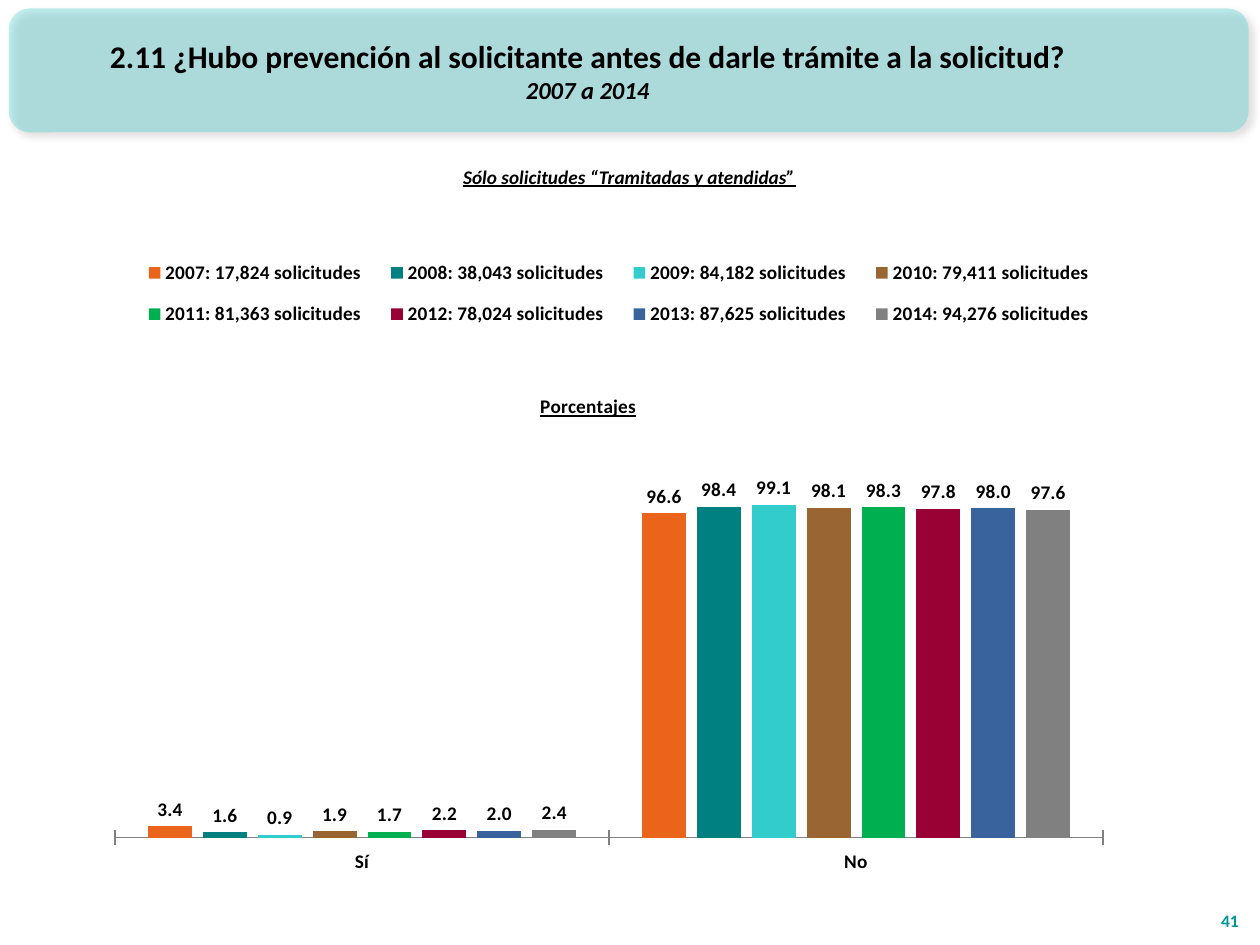
from dataclasses import dataclass
from typing import Any

from lxml.etree import SubElement
from pptx import Presentation
from pptx.chart.data import CategoryChartData
from pptx.dml.color import RGBColor
from pptx.enum.chart import XL_CHART_TYPE, XL_LABEL_POSITION, XL_LEGEND_POSITION, XL_TICK_MARK
from pptx.enum.shapes import MSO_SHAPE
from pptx.enum.text import MSO_ANCHOR, PP_ALIGN
from pptx.oxml import parse_xml
from pptx.oxml.ns import nsdecls, qn
from pptx.util import Inches, Pt

WIDE, HIGH = 10, 7.5


@dataclass(frozen=True)
class Theme:
    font: str = "Calibri"
    ink: str = "000000"
    band: str = "33CCCC"
    page: str = "009999"
    axis: str = "808080"
    head: int = 18
    sub: int = 14
    body: int = 11
    small: int = 10


@dataclass(frozen=True)
class Box:
    """Left, top, width and height as shares of the slide."""
    x: float
    y: float
    w: float
    h: float

    def place(self) -> tuple:
        return (Inches(self.x * WIDE), Inches(self.y * HIGH),
                Inches(self.w * WIDE), Inches(self.h * HIGH))


@dataclass(frozen=True)
class Line:
    text: str
    size: int
    color: str
    slant: bool = False
    under: bool = False


@dataclass(frozen=True)
class Year:
    year: int
    count: str
    yes: float
    color: str


THEME = Theme()
YEARS = [
    Year(2007, "17,824", 3.4, "EB641B"),
    Year(2008, "38,043", 1.6, "008080"),
    Year(2009, "84,182", 0.9, "33CCCC"),
    Year(2010, "79,411", 1.9, "996633"),
    Year(2011, "81,363", 1.7, "00B050"),
    Year(2012, "78,024", 2.2, "990033"),
    Year(2013, "87,625", 2.0, "39639D"),
    Year(2014, "94,276", 2.4, "808080"),
]


def apply(target: Any, **values: Any) -> None:
    for name, value in values.items():
        setattr(target, name, value)


def style(font: Any, size: int, color: str, **more: Any) -> None:
    apply(font, name=THEME.font, size=Pt(size), bold=True, **more)
    font.color.rgb = RGBColor.from_string(color)


def paint(part: Any, color: str) -> None:
    part.fill.solid()
    part.fill.fore_color.rgb = RGBColor.from_string(color)


def write(slide: Any, box: Box, lines: list[Line], align: Any, anchor: Any) -> None:
    frame = slide.shapes.add_textbox(*box.place()).text_frame
    apply(frame, word_wrap=True, vertical_anchor=anchor)
    for i, line in enumerate(lines):
        para = frame.add_paragraph() if i else frame.paragraphs[0]
        para.alignment = align
        run = para.add_run()
        run.text = line.text
        style(run.font, line.size, line.color, italic=line.slant, underline=line.under)


def draw_band(slide: Any, box: Box) -> None:
    """Header band: see-through fill with a soft shadow."""
    band = slide.shapes.add_shape(MSO_SHAPE.ROUNDED_RECTANGLE, *box.place())
    band.shadow.inherit = False
    paint(band, THEME.band)
    band.line.fill.background()
    props = band.element.spPr
    SubElement(props.find(".//" + qn("a:srgbClr")), qn("a:alpha"), val="30000")
    props.find(qn("a:effectLst")).append(parse_xml(
        f'<a:outerShdw {nsdecls("a")} blurRad="{Pt(4)}" dist="{Pt(3)}" dir="2700000" '
        'algn="tl" rotWithShape="0"><a:srgbClr val="000000"><a:alpha val="40000"/>'
        '</a:srgbClr></a:outerShdw>'))


def layout(inner: bool = False, **shares: float) -> Any:
    """Manual layout of a chart part, in shares of the chart."""
    target = '<c:layoutTarget val="inner"/>' if inner else ""
    modes = "".join(f'<c:{k}Mode val="edge"/>' for k in "xy")
    sizes = "".join(f'<c:{k} val="{v}"/>' for k, v in shares.items())
    return parse_xml(f'<c:layout {nsdecls("c")}><c:manualLayout>{target}{modes}{sizes}'
                     '</c:manualLayout></c:layout>')


def set_layout(part: Any, after: str | None, new: Any) -> None:
    for old in part.findall(qn("c:layout")):
        part.remove(old)
    if after:
        part.find(qn(after)).addnext(new)
    else:
        part.insert(0, new)


def draw_chart(slide: Any, box: Box) -> None:
    data = CategoryChartData(number_format="0.0")
    data.categories = ["Sí", "No"]
    for row in YEARS:
        data.add_series(f"{row.year}: {row.count} solicitudes",
                        (row.yes, round(100 - row.yes, 1)))
    chart = slide.shapes.add_chart(
        XL_CHART_TYPE.COLUMN_CLUSTERED, *box.place(), data).chart
    style(chart.font, THEME.body, THEME.ink)

    title = chart.chart_title.text_frame
    title.text = "Porcentajes"
    style(title.paragraphs[0].runs[0].font, THEME.body, THEME.ink, underline=True)
    chart.chart_title.include_in_layout = False

    chart.has_legend = True
    apply(chart.legend, position=XL_LEGEND_POSITION.TOP, include_in_layout=False)

    plot = chart.plots[0]
    apply(plot, gap_width=150, overlap=-25, vary_by_categories=False)
    for bars, row in zip(plot.series, YEARS):
        paint(bars.format, row.color)
        bars.invert_if_negative = False
        labels = bars.data_labels
        apply(labels, show_value=True, number_format="0.0",
              number_format_is_linked=False, position=XL_LABEL_POSITION.OUTSIDE_END)
        style(labels.font, THEME.body, THEME.ink)

    apply(chart.value_axis, visible=False, has_major_gridlines=False,
          minimum_scale=0, maximum_scale=120)
    base = chart.category_axis
    apply(base, major_tick_mark=XL_TICK_MARK.CROSS, has_major_gridlines=False)
    base.format.line.color.rgb = RGBColor.from_string(THEME.axis)

    root = chart.element.chart
    set_layout(root.find(qn("c:title")), "c:tx", layout(x=0.43, y=0.25))
    set_layout(root.find(qn("c:legend")), "c:legendPos",
               layout(x=0.03, y=0.03, w=0.96, h=0.15))
    set_layout(root.plotArea, None, layout(True, x=0.02, y=0.318, w=0.961, h=0.609))


def main() -> None:
    deck = Presentation()
    apply(deck, slide_width=Inches(WIDE), slide_height=Inches(HIGH))
    slide = deck.slides.add_slide(deck.slide_layouts[6])
    draw_band(slide, Box(0.007, 0.009, 0.984, 0.131))
    write(slide, Box(0.008, 0.012, 0.917, 0.125), [
        Line("2.11 ¿Hubo prevención al solicitante antes de darle trámite a la solicitud?",
             THEME.head, THEME.ink),
        Line("2007 a 2014", THEME.sub, THEME.ink, slant=True),
    ], PP_ALIGN.CENTER, MSO_ANCHOR.MIDDLE)
    draw_chart(slide, Box(0.075, 0.237, 0.816, 0.701))
    write(slide, Box(0.231, 0.168, 0.537, 0.039), [
        Line("Sólo solicitudes “Tramitadas y atendidas”", THEME.body, THEME.ink, True, True),
    ], PP_ALIGN.CENTER, MSO_ANCHOR.TOP)
    write(slide, Box(0.953, 0.939, 0.04, 0.053), [
        Line("41", THEME.small, THEME.page),
    ], PP_ALIGN.RIGHT, MSO_ANCHOR.BOTTOM)
    deck.save("out.pptx")


if __name__ == "__main__":
    main()
